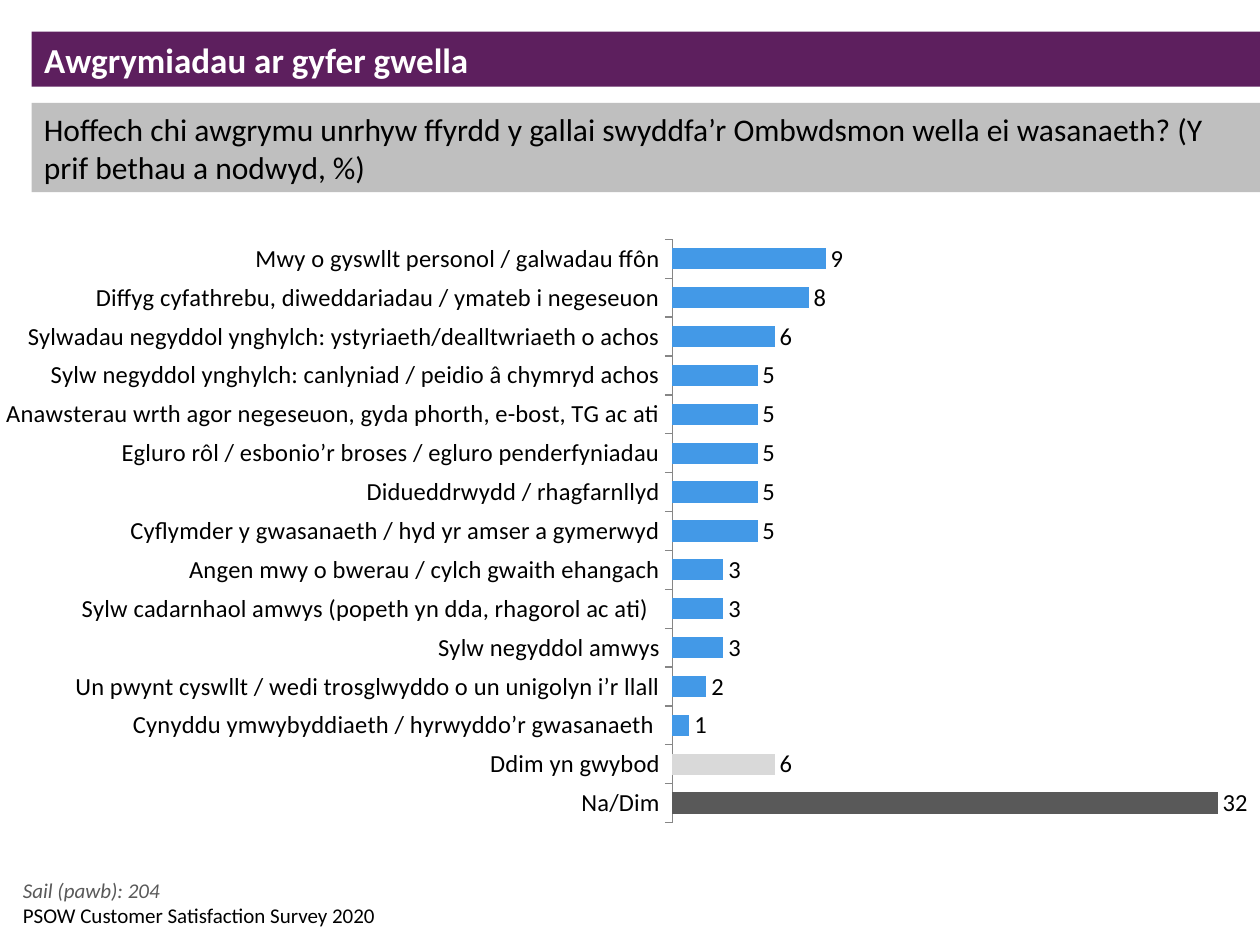
from lxml import etree
from pptx import Presentation, util as u
from pptx.chart.data import CategoryChartData
from pptx.dml.color import RGBColor
from pptx.enum import chart as ch, shapes, text
from pptx.oxml.ns import qn

COLORS = {
    "purple": "5D1F5E", "band": "BFBFBF", "white": "FFFFFF", "black": "000000",
    "suggestion": "4399E7", "unsure": "D9D9D9", "none": "595959", "axis": "868686",
}
ANSWERS = [
    ("Mwy o gyswllt personol / galwadau ffôn", 9),
    ("Diffyg cyfathrebu, diweddariadau / ymateb i negeseuon", 8),
    ("Sylwadau negyddol ynghylch: ystyriaeth/dealltwriaeth o achos", 6),
    ("Sylw negyddol ynghylch: canlyniad / peidio â chymryd achos", 5),
    ("Anawsterau wrth agor negeseuon, gyda phorth, e-bost, TG ac ati", 5),
    ("Egluro rôl / esbonio’r broses / egluro penderfyniadau", 5),
    ("Didueddrwydd / rhagfarnllyd", 5),
    ("Cyflymder y gwasanaeth / hyd yr amser a gymerwyd", 5),
    ("Angen mwy o bwerau / cylch gwaith ehangach", 3),
    ("Sylw cadarnhaol amwys (popeth yn dda, rhagorol ac ati)  ", 3),
    ("Sylw negyddol amwys", 3),
    ("Un pwynt cyswllt / wedi trosglwyddo o un unigolyn i’r llall", 2),
    ("Cynyddu ymwybyddiaeth / hyrwyddo’r gwasanaeth ", 1),
    ("Ddim yn gwybod", 6),
    ("Na/Dim", 32),
]
ANSWER_COLORS = {"Ddim yn gwybod": "unsure", "Na/Dim": "none"}


def rgb(name):
    return RGBColor.from_string(COLORS[name])


class SurveySlide:
    """Places elements on a grid of 40 columns by 30 rows."""
    font = "Calibri"
    columns, rows = 40, 30

    def __init__(self, prs):
        self.cell_w = prs.slide_width / self.columns
        self.cell_h = prs.slide_height / self.rows
        self.slide = prs.slides.add_slide(prs.slide_layouts[5])

    def box(self, left, top, width, height):
        return (u.Emu(round(left * self.cell_w)), u.Emu(round(top * self.cell_h)),
                u.Emu(round(width * self.cell_w)), u.Emu(round(height * self.cell_h)))

    def add_words(self, shape, words, size, color, anchor, bold=False, italic=False):
        frame = shape.text_frame
        frame.word_wrap = True
        frame.auto_size = text.MSO_AUTO_SIZE.NONE
        frame.vertical_anchor = anchor
        paragraph = frame.paragraphs[0]
        paragraph.alignment = text.PP_ALIGN.LEFT
        run = paragraph.add_run()
        run.text = words
        run.font.name, run.font.size = self.font, u.Pt(size)
        run.font.bold, run.font.italic = bold, italic
        run.font.color.rgb = rgb(color)

    def title(self, words, *place):
        heading = self.slide.shapes.title
        heading.left, heading.top, heading.width, heading.height = self.box(*place)
        heading.fill.solid()
        heading.fill.fore_color.rgb = rgb("purple")
        self.add_words(heading, words, 20, "white", text.MSO_ANCHOR.MIDDLE, bold=True)

    def band(self, words, *place):
        band = self.slide.shapes.add_shape(shapes.MSO_SHAPE.RECTANGLE, *self.box(*place))
        band.shadow.inherit = False
        band.fill.solid()
        band.fill.fore_color.rgb = rgb("band")
        band.line.fill.background()
        self.add_words(band, words, 18, "black", text.MSO_ANCHOR.MIDDLE)

    def note(self, words, color, *place, italic=False):
        note = self.slide.shapes.add_textbox(*self.box(*place))
        self.add_words(note, words, 12, color, text.MSO_ANCHOR.TOP, italic=italic)

    def bar_chart(self, answers, *place):
        data = CategoryChartData()
        data.categories = [answer for answer, _ in answers]
        data.add_series("Series 1", [percent for _, percent in answers])
        chart = self.slide.shapes.add_chart(
            ch.XL_CHART_TYPE.BAR_CLUSTERED, *self.box(*place), data).chart
        chart.has_legend = chart.has_title = False
        chart.font.name, chart.font.size = self.font, u.Pt(14)
        chart.font.color.rgb = rgb("black")

        answer_axis, percent_axis = chart.category_axis, chart.value_axis
        answer_axis.reverse_order = True
        answer_axis.major_tick_mark = ch.XL_TICK_MARK.OUTSIDE
        answer_axis.format.line.color.rgb = rgb("axis")
        answer_axis.format.line.width = u.Pt(0.75)
        percent_axis.visible = percent_axis.has_major_gridlines = False
        percent_axis.minimum_scale, percent_axis.maximum_scale = 0, 35

        plot = chart.plots[0]
        plot.gap_width, plot.vary_by_categories = 82, False
        plot.has_data_labels = True
        plot.data_labels.show_value = True
        plot.data_labels.position = ch.XL_LABEL_POSITION.OUTSIDE_END
        bars = plot.series[0]
        for index, (answer, _) in enumerate(answers):
            fill = bars.points[index].format.fill
            fill.solid()
            fill.fore_color.rgb = rgb(ANSWER_COLORS.get(answer, "suggestion"))
        self.fix_plot_area(chart, x=0.603, y=0.03, w=0.389, h=0.926)

    @staticmethod
    def fix_plot_area(chart, **shares):
        """Set the inner plot area as shares of the chart's size."""
        area = chart.plots[0]._element.getparent()
        for old in area.findall(qn("c:layout")):
            area.remove(old)
        layout = etree.Element(qn("c:layout"))
        area.insert(0, layout)
        manual = etree.SubElement(layout, qn("c:manualLayout"))
        settings = {"layoutTarget": "inner", "xMode": "edge", "yMode": "edge", **shares}
        for tag, value in settings.items():
            etree.SubElement(manual, qn(f"c:{tag}")).set("val", str(value))


def main():
    prs = Presentation()
    prs.slide_width, prs.slide_height = u.Inches(10), u.Inches(7.5)
    survey = SurveySlide(prs)
    survey.title("Awgrymiadau ar gyfer gwella", 1, 1, 39, 1.75)
    survey.band("Hoffech chi awgrymu unrhyw ffyrdd y gallai swyddfa’r Ombwdsmon wella "
                "ei wasanaeth? (Y prif bethau a nodwyd, %)", 1, 3.27, 39, 2.83)
    survey.bar_chart(ANSWERS, -8, 7, 48.67, 20)
    survey.note("Sail (pawb): 204", "none", 0.33, 27.67, 29, 1.2, italic=True)
    survey.note("PSOW Customer Satisfaction Survey 2020", "black", 0.33, 28.47, 21, 1.2)
    prs.save("out.pptx")


if __name__ == "__main__":
    main()
